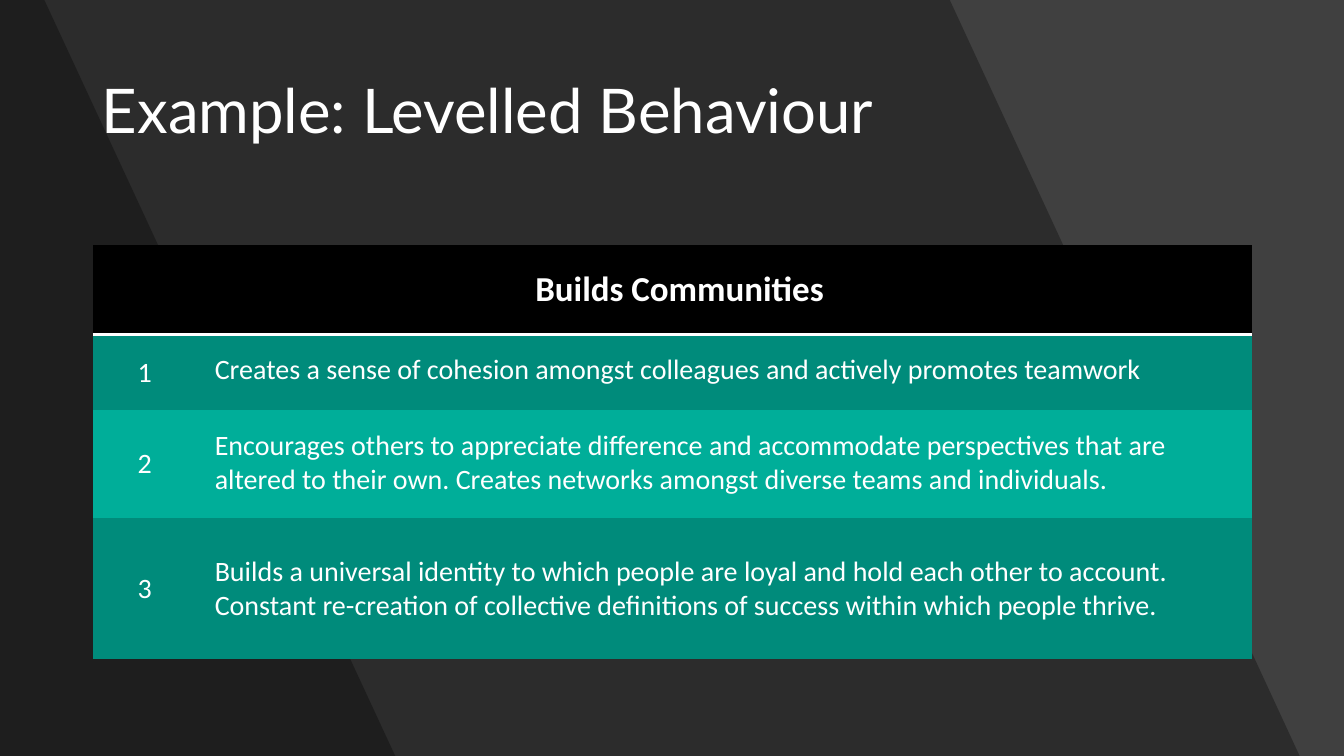
"""Build the slide on levelled behaviour for building communities."""
from dataclasses import dataclass

from lxml.etree import SubElement
from pptx import Presentation
from pptx.dml.color import RGBColor
from pptx.enum.text import MSO_ANCHOR, PP_ALIGN
from pptx.oxml import parse_xml
from pptx.oxml.ns import nsdecls, qn
from pptx.util import Inches, Pt


@dataclass(frozen=True)
class Theme:
    backdrop: str = "404040"
    shade: str = "000000"
    shade_opacity: int = 30
    text: str = "FFFFFF"
    header: str = "000000"
    bands: tuple = ("008B7B", "00AE99")
    title_font: str = "Lato"
    body_font: str = "Calibri"
    title_size: int = 44
    header_size: int = 25
    body_size: int = 20
    rule_width: int = 2
    plain_table: str = "{2D5ABB26-0587-4C30-8999-92F81FD0307C}"


def write(frame, text, *, font, size, color, bold=False, align=PP_ALIGN.LEFT, spacing=1.0):
    frame.word_wrap = True
    para = frame.paragraphs[0]
    para.alignment = align
    para.line_spacing = spacing
    span = para.add_run()
    span.text = text
    span.font.name = font
    span.font.size = Pt(size)
    span.font.bold = bold
    span.font.color.rgb = RGBColor.from_string(color)


class Page:
    def __init__(self, deck, theme):
        self.theme = theme
        self.slide = deck.slides.add_slide(deck.slide_layouts[5])
        fill = self.slide.background.fill
        fill.solid()
        fill.fore_color.rgb = RGBColor.from_string(theme.backdrop)

    def slanted_panel(self, top_width, bottom_width, height):
        builder = self.slide.shapes.build_freeform(0, 0)
        corners = [(top_width, 0), (bottom_width, height), (0, height)]
        builder.add_line_segments([(Inches(x), Inches(y)) for x, y in corners], close=True)
        panel = builder.convert_to_shape()
        panel.shadow.inherit = False
        panel.line.fill.background()
        panel.fill.solid()
        panel.fill.fore_color.rgb = RGBColor.from_string(self.theme.shade)
        color = panel.fill._xPr.find(qn("a:solidFill"))[0]
        SubElement(color, qn("a:alpha"), val=str(self.theme.shade_opacity * 1000))

    def title(self, text, left, top, width, height):
        box = self.slide.shapes.title
        self.slide.shapes._spTree.append(box._element)
        box.left, box.top = Inches(left), Inches(top)
        box.width, box.height = Inches(width), Inches(height)
        box.text_frame.vertical_anchor = MSO_ANCHOR.MIDDLE
        write(box.text_frame, text, font=self.theme.title_font, size=self.theme.title_size,
              color=self.theme.text, spacing=0.9)

    def cell(self, cell, text, fill, *, inset=0.18, anchor=MSO_ANCHOR.MIDDLE, **style):
        cell.fill.solid()
        cell.fill.fore_color.rgb = RGBColor.from_string(fill)
        cell.margin_left = Inches(0.35)
        cell.margin_top = cell.margin_right = cell.margin_bottom = Inches(inset)
        cell.vertical_anchor = anchor
        style = {"size": self.theme.body_size, **style}
        write(cell.text_frame, text, font=self.theme.body_font, color=self.theme.text, **style)

    def bottom_rule(self, cell):
        cell._tc.get_or_add_tcPr().insert(0, parse_xml(
            f'<a:lnB {nsdecls("a")} w="{Pt(self.theme.rule_width)}"><a:solidFill>'
            f'<a:srgbClr val="{self.theme.text}"/></a:solidFill></a:lnB>'))

    def level_table(self, heading, levels, left, top, widths, heights):
        frame = self.slide.shapes.add_table(
            len(heights), len(widths), Inches(left), Inches(top),
            Inches(sum(widths)), Inches(sum(heights)))
        table = frame.table
        table.horz_banding = False
        table._tbl.tblPr.find(qn("a:tableStyleId")).text = self.theme.plain_table
        for column, width in zip(table.columns, widths):
            column.width = Inches(width)
        for row, height in zip(table.rows, heights):
            row.height = Inches(height)
        header = table.cell(0, 0)
        header.merge(table.cell(0, 1))
        self.cell(header, heading, self.theme.header, inset=0.21,
                  size=self.theme.header_size, bold=True, align=PP_ALIGN.CENTER)
        for column in range(len(widths)):
            self.bottom_rule(table.cell(0, column))
        for number, (text, anchor) in enumerate(levels, 1):
            band = self.theme.bands[(number - 1) % 2]
            self.cell(table.cell(number, 0), str(number), band, align=PP_ALIGN.CENTER)
            self.cell(table.cell(number, 1), text, band, anchor=anchor)


LEVELS = [
    ("Creates a sense of cohesion amongst colleagues and actively promotes teamwork",
     MSO_ANCHOR.TOP),
    ("Encourages others to appreciate difference and accommodate perspectives that are "
     "altered to their own. Creates networks amongst diverse teams and individuals.",
     MSO_ANCHOR.TOP),
    ("Builds a universal identity to which people are loyal and hold each other to account. "
     "Constant re-creation of collective definitions of success within which people thrive.",
     MSO_ANCHOR.MIDDLE),
]


def main():
    deck = Presentation()
    deck.slide_width, deck.slide_height = Inches(13.33), Inches(7.5)
    page = Page(deck, Theme())
    for top_width, bottom_width in [(9.42, 12.89), (0.44, 3.92)]:
        page.slanted_panel(top_width, bottom_width, 7.5)
    page.title("Example: Levelled Behaviour", 0.91, 0.4, 11.51, 1.45)
    page.level_table("Builds Communities", LEVELS, 0.92, 2.43,
                     widths=[0.86, 10.64], heights=[0.89, 0.75, 1.07, 1.4])
    deck.save("out.pptx")


if __name__ == "__main__":
    main()
